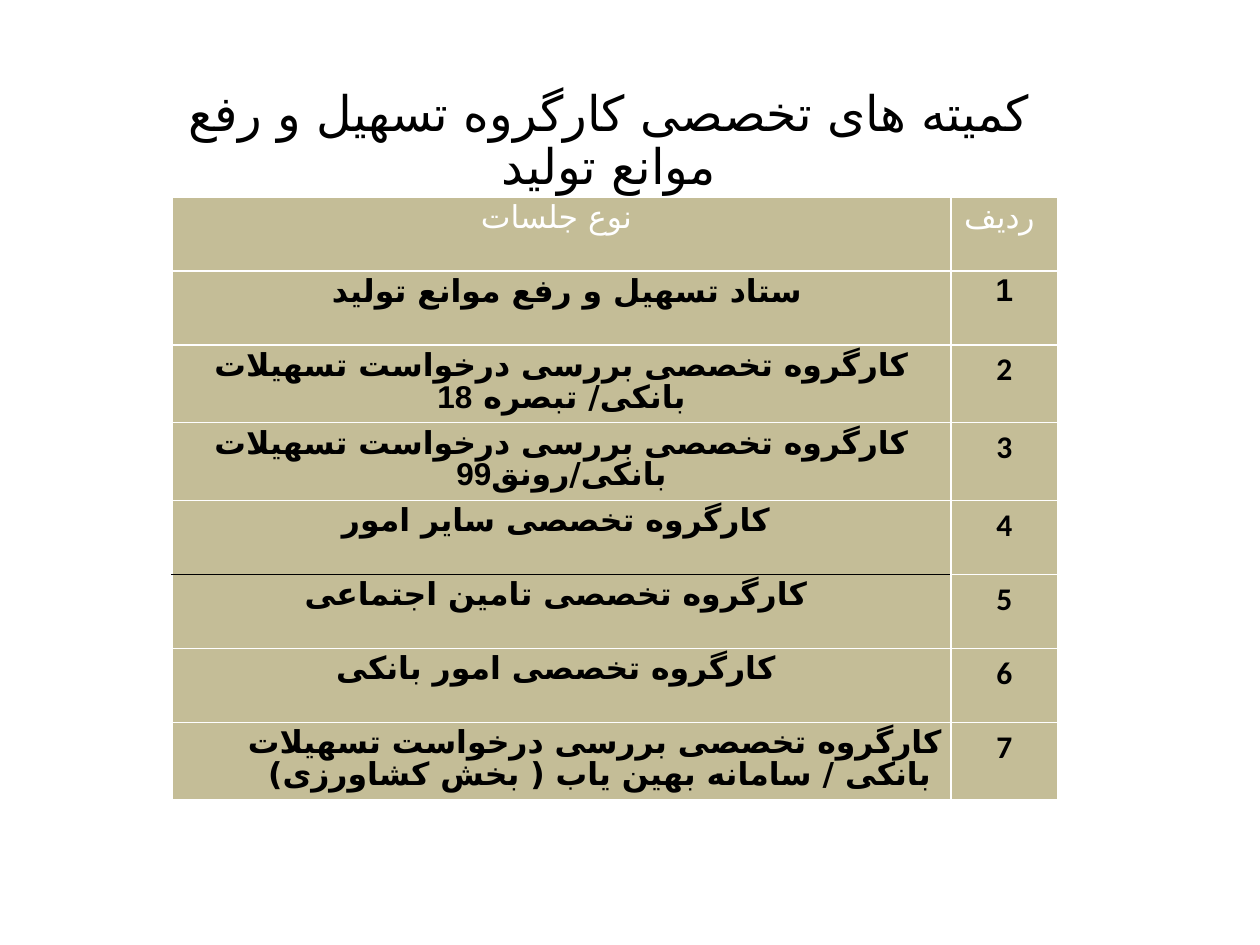
import itertools

import pptx
import pptx.util
import pptx.dml.color
import pptx.enum.text
import pptx.oxml.ns
import lxml.etree as etree

RGBColor = pptx.dml.color.RGBColor
ALIGN = pptx.enum.text.PP_ALIGN
qn = pptx.oxml.ns.qn

WHITE = RGBColor(0xFF, 0xFF, 0xFF)
BLACK = RGBColor(0, 0, 0)
TAN = RGBColor(0xC4, 0xBD, 0x97)

TITLE = "کمیته های تخصصی کارگروه تسهیل و رفع موانع تولید"
HEADER = ("نوع جلسات ", "ردیف ")
MEETINGS = [
    "ستاد تسهیل و رفع موانع تولید ",
    "کارگروه تخصصی بررسی درخواست تسهیلات بانکی/ تبصره 18",
    "کارگروه تخصصی بررسی درخواست تسهیلات بانکی/رونق99",
    "کارگروه تخصصی سایر امور ",
    "کارگروه تخصصی تامین اجتماعی ",
    "کارگروه تخصصی امور بانکی ",
    "کارگروه تخصصی بررسی درخواست تسهیلات بانکی / سامانه بهین یاب ( بخش کشاورزی) ",
]
ROWS = [HEADER] + [(name, str(n)) for n, name in enumerate(MEETINGS, 1)]
RTL_ROW = 1
BLACK_LINE_ROW = 4

SLIDE = (1260, 945)
TITLE_BOX = (159, 83, 900, 88)
TABLE_AT = (172, 197)
COLS = (779, 107)
ROW_H = 74
MARGINS = {"margin_left": 9, "margin_right": 9, "margin_top": 6, "margin_bottom": 6}
SCRIPT_FONT = {True: "Arial", False: "DejaVu Sans"}


def px(n):
    return pptx.util.Emu(round(n * 914400 / 126))


def write(tf, text, font, color, align, rtl, spacing):
    p = tf.paragraphs[0]
    p.alignment = align
    if spacing:
        p.line_spacing = spacing
    if rtl:
        p._p.get_or_add_pPr().set("rtl", "1")
    for is_number, chars in itertools.groupby(text, str.isdigit):
        r = p.add_run()
        r.text = "".join(chars)
        for name, value in font.items():
            setattr(r.font, name, value)
        r.font.color.rgb = color
        rPr = r._r.get_or_add_rPr()
        rPr.set("lang", "fa-IR")
        etree.SubElement(rPr, qn("a:cs")).set("typeface", SCRIPT_FONT[is_number])


def add_border(cell, side, color):
    ln = etree.SubElement(cell._tc.get_or_add_tcPr(), qn("a:ln" + side))
    ln.set("w", str(pptx.util.Pt(1)))
    fill = etree.SubElement(ln, qn("a:solidFill"))
    etree.SubElement(fill, qn("a:srgbClr")).set("val", str(color))


def main():
    prs = pptx.Presentation()
    prs.slide_width, prs.slide_height = map(px, SLIDE)
    s = prs.slides.add_slide(prs.slide_layouts[6])

    tf = s.shapes.add_textbox(*map(px, TITLE_BOX)).text_frame
    tf.word_wrap = True
    title_font = {"name": "Arial", "size": pptx.util.Pt(28)}
    write(tf, TITLE, title_font, BLACK, ALIGN.CENTER, True, 0.9)

    size = (sum(COLS), ROW_H * len(ROWS))
    table = s.shapes.add_table(len(ROWS), len(COLS), *map(px, TABLE_AT + size)).table
    table.first_row = table.horz_banding = False
    for col, width in zip(table.columns, COLS):
        col.width = px(width)
    black_sides = {(BLACK_LINE_ROW, 0, "B"), (BLACK_LINE_ROW + 1, 0, "T")}
    for i, texts in enumerate(ROWS):
        table.rows[i].height = px(ROW_H)
        for j, text in enumerate(texts):
            cell = table.cell(i, j)
            for name, value in MARGINS.items():
                setattr(cell, name, px(value))
            for side in "LRTB":
                add_border(cell, side, BLACK if (i, j, side) in black_sides else WHITE)
            cell.fill.solid()
            cell.fill.fore_color.rgb = TAN
            font = {"name": "Calibri", "size": pptx.util.Pt(18), "bold": i > 0}
            last_name = j == 0 and i == len(ROWS) - 1
            write(cell.text_frame, text, font, BLACK if i else WHITE,
                  ALIGN.RIGHT if last_name else ALIGN.CENTER,
                  i == RTL_ROW, 0.87 if j == 0 or i <= RTL_ROW else None)

    prs.save("out.pptx")


if __name__ == "__main__":
    main()
